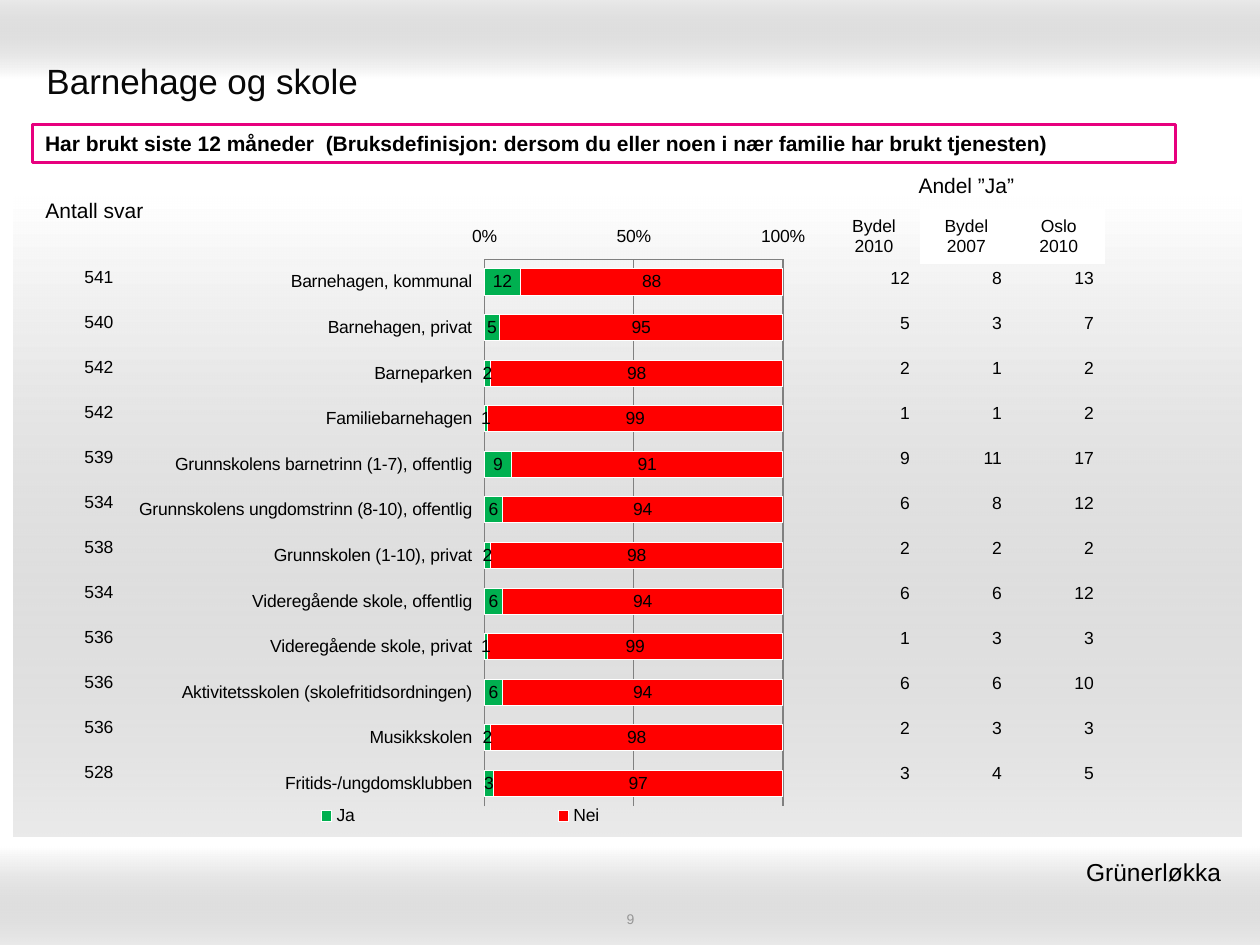
"""Build the slide on use of kindergartens and schools."""
from dataclasses import dataclass

from lxml.etree import SubElement
from pptx import Presentation
from pptx.chart.data import CategoryChartData
from pptx.dml.color import RGBColor
from pptx.enum.chart import XL_CHART_TYPE as ChartType
from pptx.enum.chart import XL_LEGEND_POSITION as LegendPosition
from pptx.enum.chart import XL_TICK_LABEL_POSITION as LabelPosition
from pptx.enum.chart import XL_TICK_MARK as TickMark
from pptx.enum.shapes import MSO_SHAPE as Shape
from pptx.enum.text import MSO_ANCHOR as Anchor
from pptx.enum.text import PP_ALIGN as Align
from pptx.oxml import parse_xml
from pptx.oxml.ns import nsdecls, qn
from pptx.util import Inches, Pt

BLACK = RGBColor(0x00, 0x00, 0x00)
TITLE_BLACK = RGBColor(0x08, 0x08, 0x08)
WHITE = RGBColor(0xFF, 0xFF, 0xFF)
BAND_GREY = RGBColor(0x99, 0x99, 0x99)
NUMBER_GREY = RGBColor(0x96, 0x96, 0x96)
AXIS_GREY = RGBColor(0x80, 0x80, 0x80)
PINK = RGBColor(0xE7, 0x00, 0x7E)
GREEN = RGBColor(0x00, 0xB0, 0x50)
RED = RGBColor(0xFF, 0x00, 0x00)
FONT = "Arial"
NO_TABLE_STYLE = "{2D5ABB26-0587-4C30-8999-92F81FD0307C}"
ROW_HEIGHT = 4.29 / 12


@dataclass
class Area:
    left: float
    top: float
    width: float
    height: float

    def lengths(self) -> list:
        return [Inches(n) for n in (self.left, self.top, self.width, self.height)]


@dataclass
class Band:
    area: Area
    angle: int


@dataclass
class Service:
    name: str
    answers: int
    yes: int
    yes_2007: int
    yes_oslo: int


@dataclass
class Label:
    text: str
    area: Area
    size: int
    color: RGBColor
    align: Align
    anchor: Anchor
    inset: float = 0.05


BANDS = [
    Band(Area(0, 0, 10, 0.62), 90),
    Band(Area(0, 6.72, 10, 0.78), 270),
    Band(Area(0.11, 1.56, 9.74, 5.08), 270),
]
LABELS = [
    Label("Barnehage og skole", Area(0.27, 0.36, 9.45, 0.55), 20, TITLE_BLACK, Align.LEFT, Anchor.MIDDLE),
    Label("9", Area(3.42, 7.22, 3.17, 0.14), 8, NUMBER_GREY, Align.CENTER, Anchor.MIDDLE, 0),
    Label("Grünerløkka", Area(6.1, 6.75, 3.69, 0.34), 14, BLACK, Align.RIGHT, Anchor.TOP),
]
SERVICES = [
    Service("Barnehagen, kommunal", 541, 12, 8, 13),
    Service("Barnehagen, privat", 540, 5, 3, 7),
    Service("Barneparken", 542, 2, 1, 2),
    Service("Familiebarnehagen", 542, 1, 1, 2),
    Service("Grunnskolens barnetrinn (1-7), offentlig", 539, 9, 11, 17),
    Service("Grunnskolens ungdomstrinn (8-10), offentlig", 534, 6, 8, 12),
    Service("Grunnskolen (1-10), privat", 538, 2, 2, 2),
    Service("Videregående skole, offentlig", 534, 6, 6, 12),
    Service("Videregående skole, privat", 536, 1, 3, 3),
    Service("Aktivitetsskolen (skolefritidsordningen)", 536, 6, 6, 10),
    Service("Musikkskolen", 536, 2, 3, 3),
    Service("Fritids-/ungdomsklubben", 528, 3, 4, 5),
]


def style_text(frame, size: int, color: RGBColor, align: Align, bold: bool = False) -> None:
    for para in frame.paragraphs:
        para.alignment = align
        para.font.name = FONT
        para.font.size = Pt(size)
        para.font.bold = bold
        para.font.color.rgb = color


def add_band(page, band: Band) -> None:
    shape = page.shapes.add_shape(Shape.RECTANGLE, *band.area.lengths())
    shape.shadow.inherit = False
    shape.line.fill.background()
    shape.fill.gradient()
    shape.fill.gradient_angle = band.angle
    for stop, color in zip(shape.fill.gradient_stops, (WHITE, BAND_GREY)):
        stop.color.rgb = color
    last_color = list(shape.fill._fill._gradFill.iter(qn("a:srgbClr")))[-1]
    SubElement(last_color, qn("a:alpha"), val="20000")


def add_label(page, label: Label) -> None:
    box = page.shapes.add_textbox(*label.area.lengths())
    frame = box.text_frame
    frame.word_wrap = True
    frame.vertical_anchor = label.anchor
    frame.margin_top = frame.margin_bottom = Inches(label.inset)
    frame.text = label.text
    style_text(frame, label.size, label.color, label.align)


def add_question(page, text: str, area: Area) -> None:
    box = page.shapes.add_shape(Shape.RECTANGLE, *area.lengths())
    box.shadow.inherit = False
    box.fill.solid()
    box.fill.fore_color.rgb = WHITE
    box.line.color.rgb = PINK
    box.line.width = Pt(2)
    box.text_frame.word_wrap = True
    box.text_frame.text = text
    style_text(box.text_frame, 12, BLACK, Align.LEFT, bold=True)


def add_grid(page, area: Area, rows: list, heights: list, align: Align, sizes: list):
    columns = len(rows[0])
    table = page.shapes.add_table(len(rows), columns, *area.lengths()).table
    table.first_row = table.horz_banding = False
    table._tbl.tblPr.find(qn("a:tableStyleId")).text = NO_TABLE_STYLE
    for column in table.columns:
        column.width = Inches(area.width / columns)
    for r, (values, height, size) in enumerate(zip(rows, heights, sizes)):
        table.rows[r].height = Inches(height)
        for c, value in enumerate(values):
            cell = table.cell(r, c)
            cell.fill.background()
            cell.vertical_anchor = Anchor.MIDDLE
            cell.text_frame.text = str(value)
            style_text(cell.text_frame, size, BLACK, align)
    return table


def add_numbers(page, area: Area, rows: list) -> None:
    add_grid(page, area, rows, [ROW_HEIGHT] * len(rows), Align.RIGHT, [10] * len(rows))


def place(part, x: float, y: float, width: float, height: float, inner: bool = False) -> None:
    for old in part.findall(qn("c:layout")):
        part.remove(old)
    target = '<c:layoutTarget val="inner"/>' if inner else ""
    sizes = "".join(f'<c:{k} val="{v}"/>' for k, v in zip("xywh", (x, y, width, height)))
    layout = parse_xml(
        f'<c:layout {nsdecls("c")}><c:manualLayout>{target}<c:xMode val="edge"/>'
        f'<c:yMode val="edge"/>{sizes}</c:manualLayout></c:layout>')
    part.insert(0 if inner else 1, layout)


def add_usage_chart(page, area: Area) -> None:
    data = CategoryChartData(number_format="0")
    data.categories = [service.name for service in SERVICES]
    data.add_series("Ja", [service.yes for service in SERVICES])
    data.add_series("Nei", [100 - service.yes for service in SERVICES])
    chart = page.shapes.add_chart(ChartType.BAR_STACKED, *area.lengths(), data).chart
    chart.has_title = False
    chart.font.name = FONT
    chart.font.size = Pt(10)
    chart.font.color.rgb = BLACK
    chart.has_legend = True
    chart.legend.position = LegendPosition.BOTTOM
    chart.legend.include_in_layout = False
    place(chart.legend._element, 0, 0.91, 0.97, 0.05)
    place(chart._chartSpace.chart.plotArea, 0.52, 0.07, 0.43, 0.85, inner=True)

    plot = chart.plots[0]
    plot.gap_width, plot.overlap = 75, 100
    plot.vary_by_categories = False
    for series, color in zip(plot.series, (GREEN, RED)):
        series.format.fill.solid()
        series.format.fill.fore_color.rgb = color
        series.format.line.color.rgb = WHITE
        series.data_labels.show_value = True
        series.data_labels.number_format = "0"
        series.data_labels.number_format_is_linked = False

    names, scale = chart.category_axis, chart.value_axis
    names.reverse_order = True
    scale.minimum_scale, scale.maximum_scale, scale.major_unit = 0, 100, 50
    scale.has_major_gridlines = True
    scale.major_gridlines.format.line.color.rgb = AXIS_GREY
    scale.tick_labels.number_format = "General\\%"
    scale.tick_labels.number_format_is_linked = False
    for axis, mark in ((names, TickMark.NONE), (scale, TickMark.INSIDE)):
        axis.major_tick_mark = mark
        axis.minor_tick_mark = TickMark.NONE
        axis.tick_label_position = LabelPosition.LOW
        axis.format.line.color.rgb = AXIS_GREY


def main() -> None:
    deck = Presentation()
    deck.slide_width, deck.slide_height = Inches(10), Inches(7.5)
    page = deck.slides.add_slide(deck.slide_layouts[6])
    for band in BANDS:
        add_band(page, band)
    for label in LABELS:
        add_label(page, label)
    add_question(
        page,
        "Har brukt siste 12 måneder  (Bruksdefinisjon: dersom du eller noen i nær familie har brukt tjenesten)",
        Area(0.26, 0.99, 9.07, 0.3))
    add_usage_chart(page, Area(0.98, 1.7, 5.51, 5.11))
    add_numbers(page, Area(6.59, 2.03, 2.19, 4.29), [(s.yes, s.yes_2007, s.yes_oslo) for s in SERVICES])
    add_numbers(page, Area(0.29, 2.02, 0.71, 4.29), [(s.answers,) for s in SERVICES])
    headings = [("Andel ”Ja”", "", ""), ("Bydel\n2010", "Bydel\n2007", "Oslo\n2010")]
    header = add_grid(page, Area(6.57, 1.29, 2.2, 0.8), headings, [0.37, 0.43], Align.CENTER, [12, 10])
    header.cell(0, 0).merge(header.cell(0, 2))
    for column in (1, 2):
        header.cell(1, column).fill.solid()
        header.cell(1, column).fill.fore_color.rgb = WHITE
    add_grid(page, Area(0.04, 1.38, 1.42, 0.59), [("Antall svar",)], [0.59], Align.CENTER, [12])
    deck.save("out.pptx")


if __name__ == "__main__":
    main()
